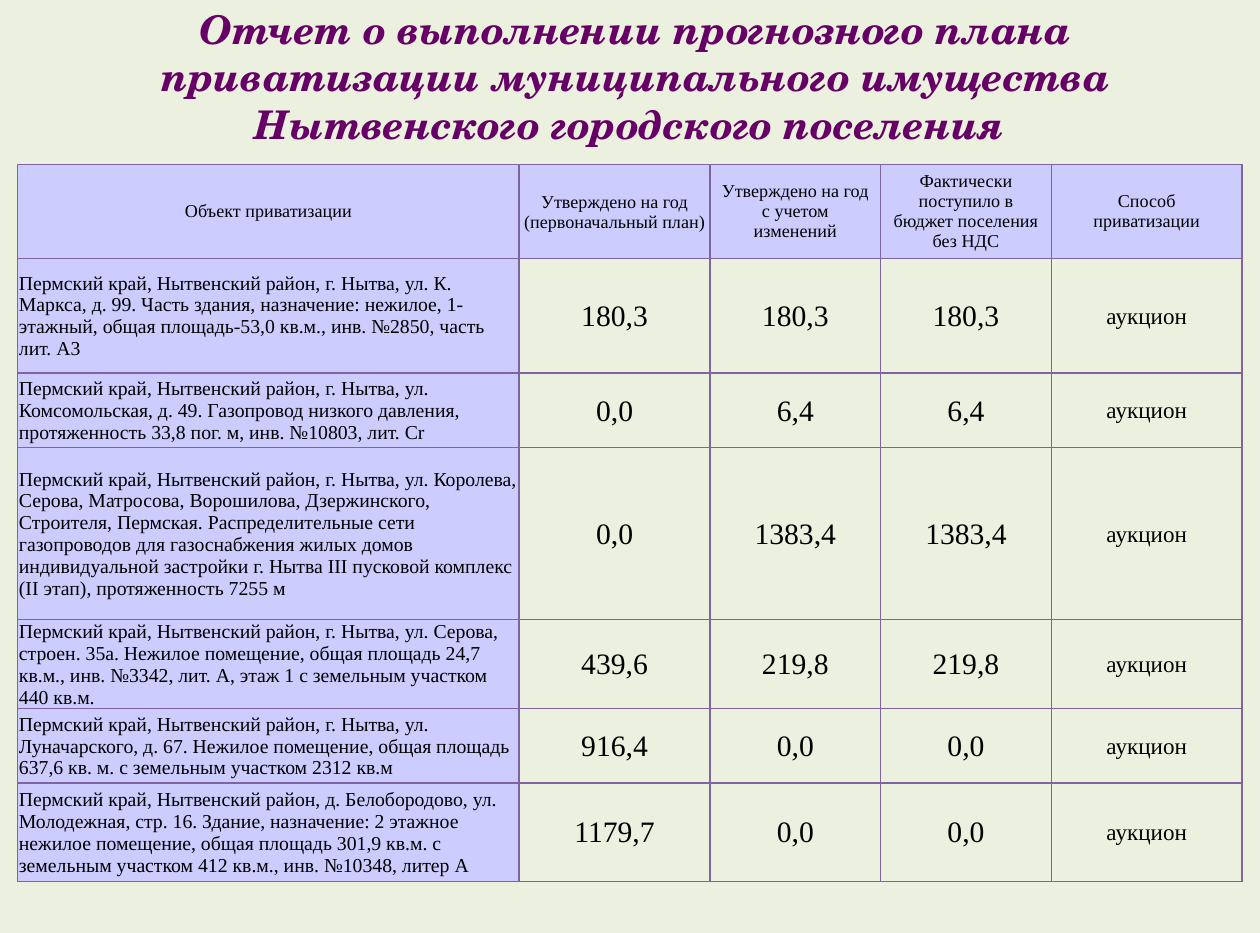
from lxml import etree
from pptx import Presentation
from pptx.dml.color import RGBColor
from pptx.enum import text
from pptx.oxml import ns
from pptx.util import Inches, Pt

CREAM = RGBColor(0xEB, 0xF1, 0xDE)
LILAC = RGBColor(0xCC, 0xCC, 0xFF)
PURPLE = RGBColor(0x80, 0x64, 0xA2)
PLUM = RGBColor(0x66, 0x00, 0x66)
BLACK = RGBColor(0x00, 0x00, 0x00)

HEADERS = [
    "Объект приватизации",
    "Утверждено на год (первоначальный план)",
    "Утверждено на год с учетом изменений",
    "Фактически поступило в бюджет поселения без НДС",
    "Способ приватизации",
]
OBJECTS = [
    ("Пермский край, Нытвенский район, г. Нытва, ул. К. Маркса, д. 99. "
     "Часть здания, назначение: нежилое, 1-этажный, общая площадь-53,0 кв.м., "
     "инв. №2850, часть лит. А3", "180,3", "180,3", "180,3"),
    ("Пермский край, Нытвенский район, г. Нытва, ул. Комсомольская, д. 49. "
     "Газопровод низкого давления, протяженность 33,8 пог. м, "
     "инв. №10803, лит. Cr", "0,0", "6,4", "6,4"),
    ("Пермский край, Нытвенский район, г. Нытва, ул. Королева, Серова, "
     "Матросова, Ворошилова, Дзержинского, Строителя, Пермская. "
     "Распределительные сети газопроводов для газоснабжения жилых домов "
     "индивидуальной застройки г. Нытва III пусковой комплекс (II этап), "
     "протяженность 7255 м", "0,0", "1383,4", "1383,4"),
    ("Пермский край, Нытвенский район, г. Нытва, ул. Серова, строен. 35а. "
     "Нежилое помещение, общая площадь 24,7 кв.м., инв. №3342, лит. А, "
     "этаж 1 с земельным участком 440 кв.м.", "439,6", "219,8", "219,8"),
    ("Пермский край, Нытвенский район, г. Нытва, ул. Луначарского, д. 67. "
     "Нежилое помещение, общая площадь 637,6 кв. м. "
     "с земельным участком 2312 кв.м", "916,4", "0,0", "0,0"),
    ("Пермский край, Нытвенский район, д. Белобородово, ул. Молодежная, "
     "стр. 16. Здание, назначение: 2 этажное нежилое помещение, "
     "общая площадь 301,9 кв.м. с земельным участком 412 кв.м., "
     "инв. №10348, литер А", "1179,7", "0,0", "0,0"),
]
ROWS = [HEADERS] + [[*item, "аукцион"] for item in OBJECTS]
COLUMN_WIDTHS = [4.23, 1.61, 1.44, 1.44, 1.61]
ROW_HEIGHTS = [0.79, 0.97, 0.63, 1.45, 0.73, 0.63, 0.83]
HEADER_MARGINS = [0.1, 0.01, 0.1, 0.1, 0.12]
BODY_SIZES = [12, 18, 18, 18, 14]


def add_borders(cell):
    properties = cell._tc.get_or_add_tcPr()
    for index, side in enumerate(("lnL", "lnR", "lnT", "lnB")):
        line = etree.Element(ns.qn(f"a:{side}"), w=str(Pt(1)))
        fill = etree.SubElement(line, ns.qn("a:solidFill"))
        etree.SubElement(fill, ns.qn("a:srgbClr"), val=str(PURPLE))
        properties.insert(index, line)


deck = Presentation()
deck.slide_width = Inches(10.63)
deck.slide_height = Inches(63 / 8)
page = deck.slides.add_slide(deck.slide_layouts[6])
page.background.fill.solid()
page.background.fill.fore_color.rgb = CREAM

frame = page.shapes.add_table(
    len(ROWS), len(HEADERS), Inches(0.15), Inches(1.39),
    Inches(sum(COLUMN_WIDTHS)), Inches(sum(ROW_HEIGHTS)))
table = frame.table
for column, width in zip(table.columns, COLUMN_WIDTHS):
    column.width = Inches(width)
for row, height in zip(table.rows, ROW_HEIGHTS):
    row.height = Inches(height)

for row_index, values in enumerate(ROWS):
    for column_index, value in enumerate(values):
        is_header = row_index == 0
        is_object = column_index == 0
        cell = table.cell(row_index, column_index)
        cell.text = value
        cell.vertical_anchor = text.MSO_ANCHOR.MIDDLE
        side_margin = HEADER_MARGINS[column_index] if is_header else 0.01
        cell.margin_left = cell.margin_right = Inches(side_margin)
        if side_margin == 0.01:
            cell.margin_top = Inches(0.01)
            cell.margin_bottom = Inches(0)
        cell.fill.solid()
        cell.fill.fore_color.rgb = LILAC if is_header or is_object else CREAM
        add_borders(cell)
        para = cell.text_frame.paragraphs[0]
        centred = is_header or not is_object
        para.alignment = text.PP_ALIGN.CENTER if centred else text.PP_ALIGN.LEFT
        para.font.name = "Times New Roman"
        para.font.size = Pt(11 if is_header else BODY_SIZES[column_index])
        para.font.bold = False
        para.font.color.rgb = BLACK

title = page.shapes.add_textbox(Inches(0.4), Inches(0.1), Inches(9.92), Inches(1.08))
title.text_frame.word_wrap = True
title.text_frame.vertical_anchor = text.MSO_ANCHOR.MIDDLE
para = title.text_frame.paragraphs[0]
para.text = ("Отчет о выполнении прогнозного плана приватизации "
             "муниципального имущества Нытвенского городского поселения ")
para.alignment = text.PP_ALIGN.CENTER
para.font.name = "TeX Gyre Schola"
para.font.size = Pt(24)
para.font.bold = True
para.font.italic = True
para.font.color.rgb = PLUM

deck.save("out.pptx")
